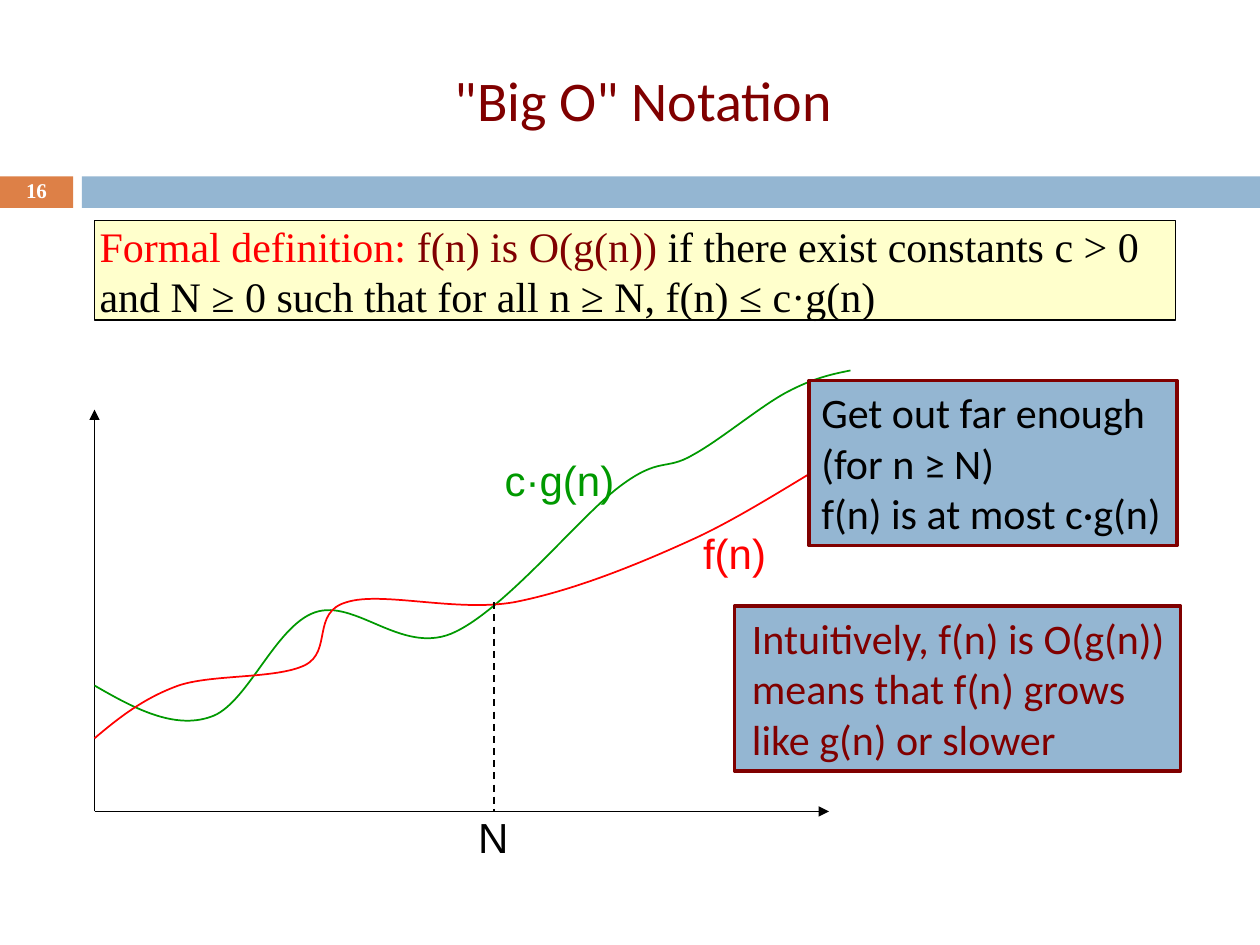
from dataclasses import dataclass

from lxml.etree import SubElement
from pptx import Presentation
from pptx.dml.color import RGBColor
from pptx.enum.dml import MSO_LINE_DASH_STYLE as Dash
from pptx.enum.shapes import MSO_CONNECTOR as Connector, MSO_SHAPE as Preset
from pptx.enum.text import MSO_ANCHOR as Anchor, PP_ALIGN as Align
from pptx.oxml.ns import qn
from pptx.util import Inches, Pt


@dataclass(frozen=True)
class Theme:
    orange: str = "DD8047"
    blue: str = "94B6D2"
    cream: str = "FFFFCC"
    maroon: str = "800000"
    red: str = "FF0000"
    green: str = "009900"
    black: str = "000000"
    white: str = "FFFFFF"
    heading: str = "Calibri"
    serif: str = "Times New Roman"
    label: str = "Arial"
    title_size: int = 32
    body_size: int = 24
    number_size: int = 12


THEME = Theme()
DEFAULT_INSETS = (0.1, 0.05, 0.1, 0.05)
TIGHT_INSETS = (0, 0, 0.04, 0)


@dataclass(frozen=True)
class Span:
    text: str
    color: str


@dataclass(frozen=True)
class TextStyle:
    font: str
    size: int = THEME.body_size
    bold: bool = False
    align: Align = Align.LEFT
    anchor: Anchor = Anchor.TOP
    insets: tuple = DEFAULT_INSETS
    margin: float = 0
    indent: float = 0
    before: float = 0
    spacing: float = 1


@dataclass(frozen=True)
class Panel:
    at: tuple
    fill: str
    line: str = ""
    weight: float = 1
    style: TextStyle | None = None
    paragraphs: tuple = ()


@dataclass(frozen=True)
class Label:
    at: tuple
    style: TextStyle
    span: Span


@dataclass(frozen=True)
class Curve:
    """A start point, then three points for every Bezier segment."""
    color: str
    points: tuple


def rgb(value: str) -> RGBColor:
    return RGBColor.from_string(value)


def assign(target, values: dict) -> None:
    for name, value in values.items():
        setattr(target, name, value)


def write(box, style: TextStyle, paragraphs: tuple) -> None:
    frame = box.text_frame
    left, top, right, bottom = map(Inches, style.insets)
    assign(frame, dict(word_wrap=True, vertical_anchor=style.anchor, margin_left=left,
                       margin_top=top, margin_right=right, margin_bottom=bottom))
    for index, spans in enumerate(paragraphs):
        para = frame.add_paragraph() if index else frame.paragraphs[0]
        assign(para, dict(alignment=style.align, space_before=Pt(style.before),
                          line_spacing=style.spacing))
        properties = para._p.get_or_add_pPr()
        properties.set("marL", str(Inches(style.margin)))
        properties.set("indent", str(Inches(style.indent)))
        for span in spans:
            run = para.add_run()
            run.text = span.text
            assign(run.font, dict(name=style.font, size=Pt(style.size), bold=style.bold))
            run.font.color.rgb = rgb(span.color)


def draw_panel(shapes, panel: Panel) -> None:
    box = shapes.add_shape(Preset.RECTANGLE, *map(Inches, panel.at))
    box.shadow.inherit = False
    box.fill.solid()
    box.fill.fore_color.rgb = rgb(panel.fill)
    if panel.line:
        box.line.color.rgb = rgb(panel.line)
        box.line.width = Pt(panel.weight)
    else:
        box.line.fill.background()
    if panel.style:
        write(box, panel.style, panel.paragraphs)


def draw_label(shapes, label: Label) -> None:
    box = shapes.add_textbox(*map(Inches, label.at))
    write(box, label.style, ((label.span,),))


def draw_line(shapes, start: tuple, end: tuple, arrow: bool = False, dashed: bool = False) -> None:
    line = shapes.add_connector(Connector.STRAIGHT, *map(Inches, start + end))
    line.line.color.rgb = rgb(THEME.black)
    line.line.width = Pt(1)
    if dashed:
        line.line.dash_style = Dash.DASH
    if arrow:
        SubElement(line.line._get_or_add_ln(), qn("a:tailEnd"), type="triangle")
    SubElement(line._element.spPr, qn("a:effectLst"))


def draw_curve(shapes, curve: Curve) -> None:
    """Draw the points as a polyline, then turn each three segments into one Bezier."""
    points = [(Inches(x), Inches(y)) for x, y in curve.points]
    builder = shapes.build_freeform(*points[0])
    builder.add_line_segments(points[1:], close=False)
    shape = builder.convert_to_shape()
    shape.shadow.inherit = False
    shape.fill.background()
    shape.line.color.rgb = rgb(curve.color)
    shape.line.width = Pt(1)
    outline = next(shape._element.iter(qn("a:moveTo"))).getparent()
    segments = outline.findall(qn("a:lnTo"))
    for first in range(0, len(segments), 3):
        bezier = SubElement(outline, qn("a:cubicBezTo"))
        for segment in segments[first:first + 3]:
            bezier.append(segment[0])
            outline.remove(segment)


TITLE = TextStyle(THEME.heading, THEME.title_size, align=Align.CENTER, anchor=Anchor.MIDDLE,
                  insets=(0.1, 0.05, 0.14, 0.05))
NUMBER = TextStyle(THEME.serif, THEME.number_size, True, Align.CENTER, Anchor.MIDDLE, spacing=0.8)
DEFINITION = TextStyle(THEME.serif, insets=TIGHT_INSETS, margin=0.04, before=4.5)
GRAPH = TextStyle(THEME.label, align=Align.CENTER, insets=TIGHT_INSETS, margin=0.04, before=10.5)
NOTE = TextStyle(THEME.heading)
HANGING_NOTE = TextStyle(THEME.heading, margin=0.23, indent=-0.19)

BANDS = (Panel((0, 1.4, 0.58, 0.25), THEME.orange), Panel((0.65, 1.4, 9.35, 0.25), THEME.blue))
HEADINGS = (
    Label((0.67, 0.25, 8.92, 1.08), TITLE, Span('"Big O" Notation', THEME.maroon)),
    Label((0, 1.39, 0.58, 0.27), NUMBER, Span("16", THEME.white)),
)
FORMAL = Panel((0.75, 1.75, 8.58, 0.79), THEME.cream, THEME.black, 1, DEFINITION, ((
    Span("Formal definition: ", THEME.red),
    Span("f(n) is O(g(n)) ", THEME.maroon),
    Span("if there exist constants c > 0 and N ≥ 0 such that for all n ≥ N, f(n) ≤ c·g(n)",
         THEME.black),
),))
NOTES = (
    Panel((6.42, 3.02, 2.92, 1.31), THEME.blue, THEME.maroon, 2, NOTE, tuple(
        (Span(text, THEME.black),)
        for text in ("Get out far enough (for n ≥ N)", "f(n) is at most c·g(n)"))),
    Panel((5.83, 4.81, 3.54, 1.31), THEME.blue, THEME.maroon, 2, HANGING_NOTE, tuple(
        (Span(text, THEME.maroon),)
        for text in ("Intuitively, f(n) is O(g(n))", "means that f(n) grows",
                     "like g(n) or slower"))),
)
ORIGIN = (0.75, 6.44)
AXIS_ENDS = ((0.75, 3.25), (6.58, 6.44))
CROSSING = (3.92, 4.78)
CURVES = (
    Curve(THEME.green, (
        (0.75, 5.44), (1.06, 5.62), (1.38, 5.79), (1.67, 5.69), (1.96, 5.6), (2.18, 4.97),
        (2.5, 4.86), (2.82, 4.75), (3.18, 5.19), (3.58, 5.03), (3.99, 4.86), (4.6, 4.1),
        (4.92, 3.86), (5.24, 3.62), (5.28, 3.74), (5.5, 3.61), (5.72, 3.49), (6.04, 3.22),
        (6.25, 3.11), (6.46, 3), (6.6, 2.97), (6.75, 2.94))),
    Curve(THEME.red, (
        (0.75, 5.86), (0.94, 5.7), (1.14, 5.54), (1.42, 5.44), (1.69, 5.35), (2.19, 5.39),
        (2.42, 5.28), (2.64, 5.17), (2.47, 4.86), (2.75, 4.78), (3.03, 4.69), (3.62, 4.86),
        (4.08, 4.78), (4.54, 4.69), (5.04, 4.49), (5.5, 4.28), (5.96, 4.07), (6.51, 3.69),
        (6.83, 3.53), (7.15, 3.36), (7.28, 3.32), (7.42, 3.28))),
)
GRAPH_LABELS = (
    Label((3.94, 3.61, 1, 0.39), GRAPH, Span("c·g(n)", THEME.green)),
    Label((5.33, 4.19, 1, 0.39), GRAPH, Span("f(n)", THEME.red)),
    Label((3.5, 6.44, 0.83, 0.39), GRAPH, Span("N", THEME.black)),
)


def draw_graph(shapes) -> None:
    for end in AXIS_ENDS:
        draw_line(shapes, ORIGIN, end, arrow=True)
    for curve in CURVES:
        draw_curve(shapes, curve)
    draw_line(shapes, CROSSING, (CROSSING[0], ORIGIN[1]), dashed=True)
    for label in GRAPH_LABELS:
        draw_label(shapes, label)


def main() -> None:
    deck = Presentation()
    assign(deck, dict(slide_width=Inches(10), slide_height=Inches(7.5)))
    page = deck.slides.add_slide(deck.slide_layouts[6])
    for band in BANDS:
        draw_panel(page.shapes, band)
    for heading in HEADINGS:
        draw_label(page.shapes, heading)
    draw_panel(page.shapes, FORMAL)
    draw_graph(page.shapes.add_group_shape().shapes)
    for note in NOTES:
        draw_panel(page.shapes, note)
    deck.save("out.pptx")


if __name__ == "__main__":
    main()
